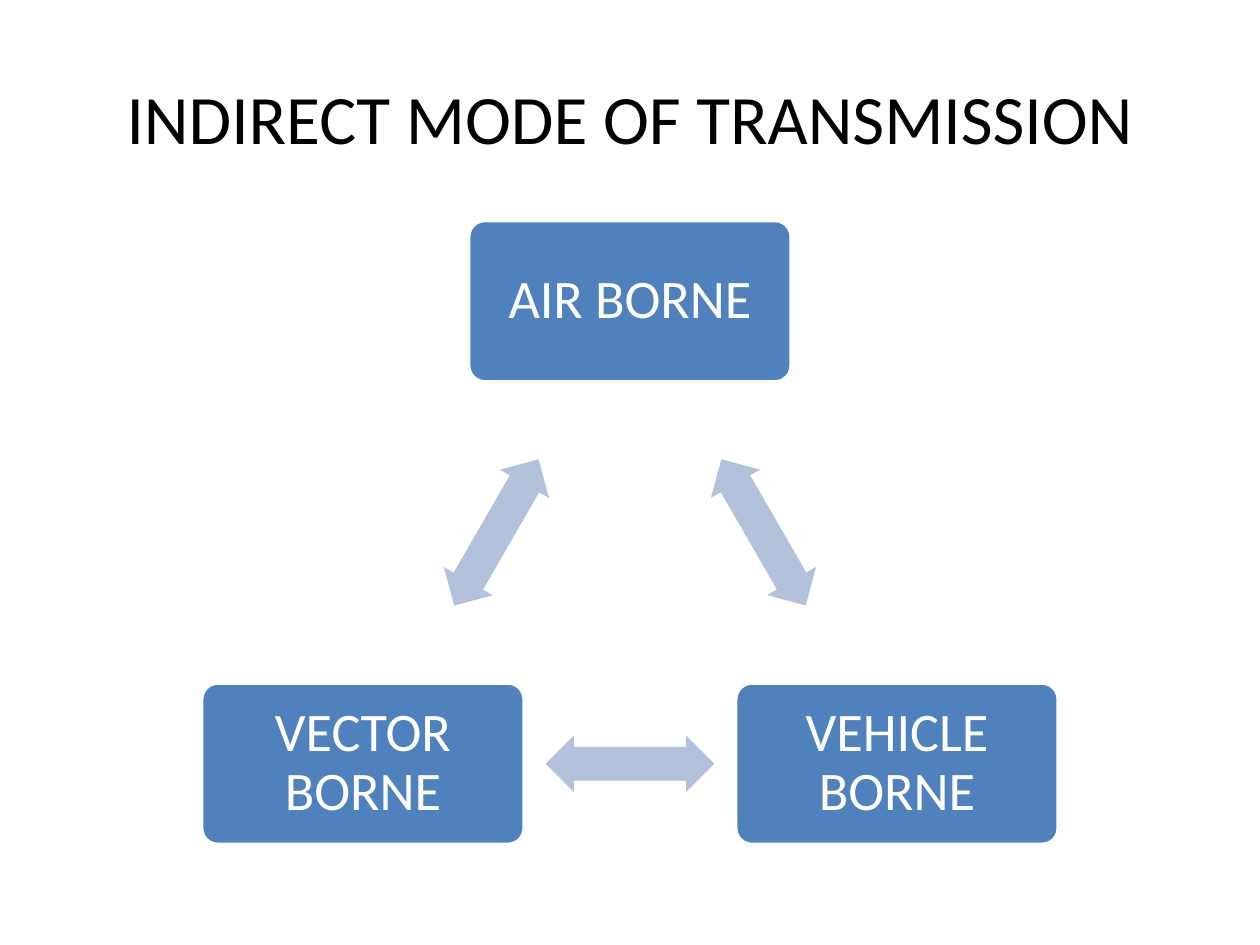
from math import atan2, cos, degrees, radians, sin
from pptx import Presentation
from pptx.dml.color import RGBColor
from pptx.enum.shapes import MSO_SHAPE
from pptx.enum.text import MSO_ANCHOR, PP_ALIGN
from pptx.util import Pt

THEME = {
    "font": "Calibri",
    "title": (39.6, RGBColor(0, 0, 0)),
    "label": (31, RGBColor(255, 255, 255)),
    "box": RGBColor(0x4F, 0x81, 0xBD),
    "edge": RGBColor(255, 255, 255),
    "arrow": RGBColor(0xB3, 0xC1, 0xDB),
}


def write(shape, text, style, inset):
    """Set centred text in a theme style, with one inset on all sides."""
    frame = shape.text_frame
    frame.text = text
    form = {"word_wrap": True, "vertical_anchor": MSO_ANCHOR.MIDDLE}
    form |= {f"margin_{side}": Pt(inset) for side in ("left", "right", "top", "bottom")}
    for key, value in form.items():
        setattr(frame, key, value)
    para = frame.paragraphs[0]
    para.alignment = PP_ALIGN.CENTER
    size, color = THEME[style]
    for key, value in {"name": THEME["font"], "size": Pt(size)}.items():
        setattr(para.runs[0].font, key, value)
    para.runs[0].font.color.rgb = color
    return para


def place(kind, x, y, wide, high, fill, adjust):
    """Add a filled shape centred on x, y."""
    shape = slide.shapes.add_shape(
        kind, Pt(x - wide / 2), Pt(y - high / 2), Pt(wide), Pt(high))
    shape.shadow.inherit = False
    shape.fill.solid()
    shape.fill.fore_color.rgb = THEME[fill]
    shape.line.fill.background()
    for i, value in enumerate(adjust):
        shape.adjustments[i] = value
    return shape


deck = Presentation()
deck.slide_width, deck.slide_height = Pt(720), Pt(540)
slide = deck.slides.add_slide(deck.slide_layouts[5])

title = slide.shapes.title
for key, value in {"left": 36, "top": 21.6, "width": 648, "height": 90}.items():
    setattr(title, key, Pt(value))
write(title, "INDIRECT MODE OF TRANSMISSION", "title", 3.6)

# The modes sit on the corners of an equilateral triangle, clockwise from the top
modes = ["AIR BORNE", "VEHICLE BORNE", "VECTOR BORNE"]
mid_x, mid_y, radius = 360, 348.3, 176.2
turns = [radians(i * 360 / len(modes) - 90) for i in range(len(modes))]
spots = [(mid_x + radius * cos(t), mid_y + radius * sin(t)) for t in turns]

for i, (mode, (x, y)) in enumerate(zip(modes, spots)):
    box = place(MSO_SHAPE.ROUNDED_RECTANGLE, x, y, 184.3, 92.2, "box", [0.1])
    box.line.color.rgb = THEME["edge"]
    box.line.width = Pt(2)
    write(box, mode, "label", 10).line_spacing = 0.9

    # A double arrow lies halfway along the side to the next mode
    next_x, next_y = spots[(i + 1) % len(spots)]
    arrow = place(MSO_SHAPE.LEFT_RIGHT_ARROW, (x + next_x) / 2, (y + next_y) / 2,
                  96.5, 32.3, "arrow", [0.6, 0.5])
    arrow.rotation = round(degrees(atan2(next_y - y, next_x - x))) % 360

deck.save("out.pptx")
